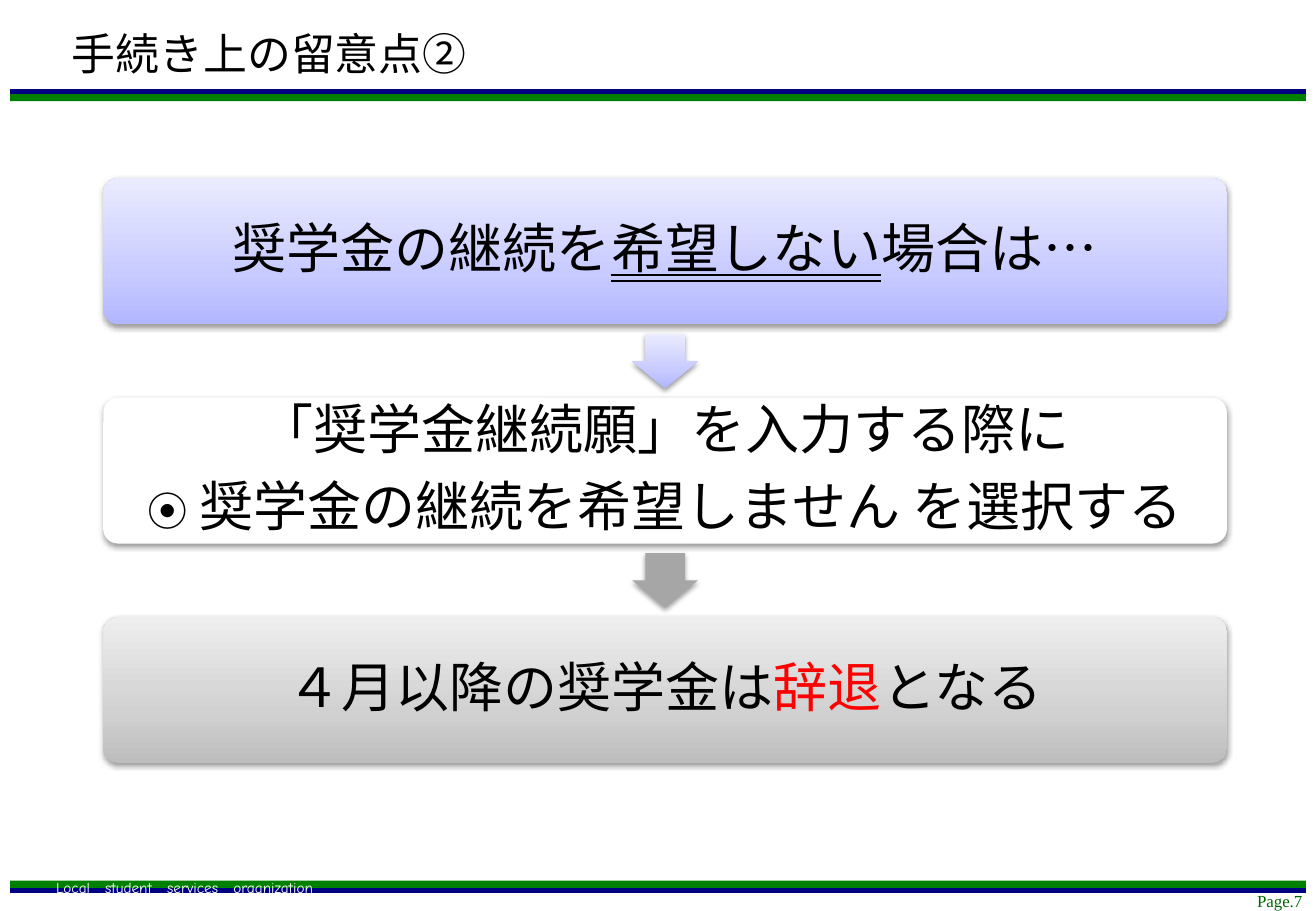
from copy import deepcopy

from lxml import etree
from pptx import Presentation
from pptx.dml.color import RGBColor
from pptx.enum import shapes, text
from pptx.oxml import ns
from pptx.util import Pt

BLACK = RGBColor(0x00, 0x00, 0x00)
WHITE = RGBColor(0xFF, 0xFF, 0xFF)
RED = RGBColor(0xFF, 0x00, 0x00)
GREEN = RGBColor(0x00, 0x80, 0x00)
DARK = RGBColor(0x00, 0x66, 0x00)
NAVY = RGBColor(0x00, 0x00, 0x80)
GREY = RGBColor(0xA6, 0xA6, 0xA6)
BLUES = [RGBColor(0xB2, 0xB6, 0xFF), RGBColor(0xC8, 0xCB, 0xFF), RGBColor(0xEA, 0xEB, 0xFF)]
GREYS = [RGBColor(0xBD, 0xBD, 0xBD), RGBColor(0xD1, 0xD1, 0xD1), RGBColor(0xEE, 0xEE, 0xEE)]
STOPS = (0, 0.35, 1)

SANS = "Noto Sans CJK JP"
KIND = shapes.MSO_SHAPE
ALIGN = text.PP_ALIGN
MID = text.MSO_ANCHOR.MIDDLE
DOUBLE = text.MSO_UNDERLINE.DOUBLE_LINE

# Box column, in points
LEFT, TOP, WIDE, HIGH, STEP = 61.2, 105.8, 666, 86.4, 130
ARROW_W, ARROW_H = 39, 32.4


def write(para, words, size=32, font=SANS, color=BLACK, line=None):
    """Add one run of text to a paragraph."""
    run = para.add_run()
    run.text = words
    run.font.size = Pt(size)
    run.font.name = font
    run.font.color.rgb = color
    run.font.underline = line
    latin = run.font._element.find(ns.qn("a:latin"))
    east = etree.Element(ns.qn("a:ea"), typeface=font)
    latin.addnext(east)


def space(para, lines, after):
    """Set line spacing, and space after as a percentage of the text size."""
    para.line_spacing = lines
    para.space_after = Pt(0)
    gap = para._p.pPr.find(ns.qn("a:spcAft"))
    gap.remove(gap[0])
    etree.SubElement(gap, ns.qn("a:spcPct"), val=str(after * 1000))


def inset(frame, left, top, right, bottom):
    frame.margin_left, frame.margin_top = Pt(left), Pt(top)
    frame.margin_right, frame.margin_bottom = Pt(right), Pt(bottom)


def shade(shape, colors):
    """Fill with one colour, or with a three-stop gradient rising upwards."""
    fill = shape.fill
    if isinstance(colors, RGBColor):
        fill.solid()
        fill.fore_color.rgb = colors
        return
    fill.gradient()
    fill.gradient_angle = 90
    stops = shape._element.spPr.find(".//" + ns.qn("a:gsLst"))
    stops.append(deepcopy(stops[0]))
    for stop, place, color in zip(fill.gradient_stops, STOPS, colors):
        stop.position = place
        stop.color.rgb = color


def block(slide, kind, x, y, w, h, colors, soft=True):
    """Add a borderless preset shape, with or without a soft shadow."""
    shape = slide.shapes.add_shape(kind, Pt(x), Pt(y), Pt(w), Pt(h))
    shade(shape, colors)
    shape.line.fill.background()
    shape.shadow.inherit = False
    if soft:
        effects = shape._element.spPr.find(ns.qn("a:effectLst"))
        cast = etree.SubElement(effects, ns.qn("a:outerShdw"), blurRad=str(Pt(3.1)),
                                dist=str(Pt(1.6)), dir="5400000", rotWithShape="0")
        tint = etree.SubElement(cast, ns.qn("a:srgbClr"), val="000000")
        etree.SubElement(tint, ns.qn("a:alpha"), val="38000")
    return shape


def band(slide, y, edge):
    """Add a green bar with a navy line along one edge."""
    block(slide, KIND.RECTANGLE, 6, y, 768, 6, GREEN, soft=False)
    rule = slide.shapes.add_connector(shapes.MSO_CONNECTOR.STRAIGHT,
                                      Pt(774), Pt(edge), Pt(6), Pt(edge))
    rule.line.color.rgb = NAVY
    rule.line.width = Pt(3)
    etree.SubElement(rule._element.spPr, ns.qn("a:effectLst"))


def label(slide, x, y, w, h, words, margins, wrap=True, anchor=None, **form):
    """Add a right-aligned line of small text."""
    frame = slide.shapes.add_textbox(Pt(x), Pt(y), Pt(w), Pt(h)).text_frame
    frame.word_wrap = wrap
    frame.vertical_anchor = anchor
    inset(frame, *margins)
    frame.paragraphs[0].alignment = ALIGN.RIGHT
    write(frame.paragraphs[0], words, **form)


def head(slide, words):
    title = slide.shapes.title
    title.left, title.top, title.width, title.height = Pt(35.3), Pt(18), Pt(525), Pt(32.4)
    frame = title.text_frame
    frame.word_wrap = True
    frame.auto_size = text.MSO_AUTO_SIZE.SHAPE_TO_FIT_TEXT
    frame.vertical_anchor = text.MSO_ANCHOR.TOP
    inset(frame, 7.2, 3.6, 7.2, 3.6)
    para = frame.paragraphs[0]
    para.alignment = ALIGN.LEFT
    space(para, 0.8, 30)
    write(para, words, size=26)


def card(slide, y, colors, rows):
    """Add a rounded box; each row is a list of (words, format) runs."""
    shape = block(slide, KIND.ROUNDED_RECTANGLE, LEFT, y, WIDE, HIGH, colors)
    shape.adjustments[0] = 0.1
    frame = shape.text_frame
    frame.word_wrap = True
    frame.vertical_anchor = MID
    inset(frame, 9.6, 9.6, 9.6, 9.6)
    for i, row in enumerate(rows):
        para = frame.add_paragraph() if i else frame.paragraphs[0]
        para.alignment = ALIGN.CENTER
        space(para, 0.9, 35)
        for words, form in row:
            write(para, words, **form)


def arrow(slide, y, colors):
    """Add a down arrow centred in the gap below the box at y."""
    top = y + (HIGH + STEP - ARROW_H) / 2
    shape = block(slide, KIND.DOWN_ARROW, LEFT + (WIDE - ARROW_W) / 2, top,
                  ARROW_W, ARROW_H, colors)
    shape.adjustments[0], shape.adjustments[1] = 0.6, 0.5


def main():
    deck = Presentation()
    deck.slide_width, deck.slide_height = Pt(780), Pt(540)
    slide = deck.slides.add_slide(deck.slide_layouts[5])

    # Frame of the page
    label(slide, 714.2, 527.8, 64.8, 13, "Page.7", (7.2, 0, 7.2, 3.6),
          size=10, font="Times New Roman", color=DARK)
    band(slide, 522, 528)
    label(slide, 12, 522, 180, 6, "Local　student　services　organization",
          (6.5, 2.9, 6.5, 0.7), wrap=False, anchor=MID,
          size=9, font="Comic Neue", color=WHITE)
    band(slide, 54, 54)
    head(slide, "手続き上の留意点②")

    # Steps, each with its box fill, the arrow below it and its text
    steps = [
        (BLUES, BLUES, [[("奨学金の継続を", {}), ("希望しない", {"line": DOUBLE}),
                         ("場合は…", {})]]),
        (WHITE, GREY, [[("「奨学金継続願」を入力する際に", {})],
                       [("⦿", {"size": 24}),
                        (" 奨学金の継続を希望しません を選択する", {})]]),
        (GREYS, None, [[("４月以降の奨学金は", {}), ("辞退", {"color": RED}),
                        ("となる", {})]]),
    ]
    for i, (fill, tip, rows) in enumerate(steps):
        y = TOP + i * STEP
        card(slide, y, fill, rows)
        if tip:
            arrow(slide, y, tip)

    deck.save("out.pptx")


if __name__ == "__main__":
    main()
